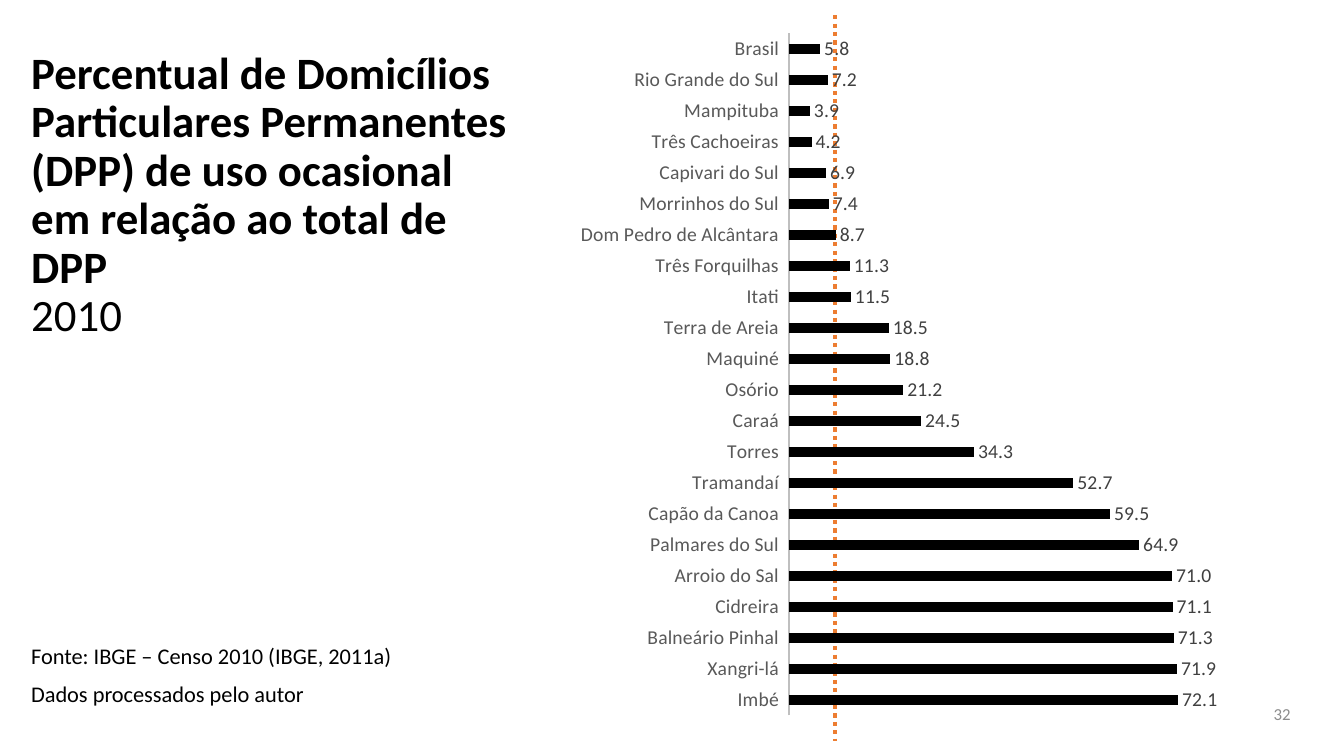
from dataclasses import dataclass

from lxml import etree
from pptx import Presentation
from pptx.chart.data import CategoryChartData
from pptx.dml.color import RGBColor
from pptx.enum.chart import XL_CHART_TYPE, XL_LABEL_POSITION, XL_TICK_LABEL_POSITION, XL_TICK_MARK
from pptx.enum.dml import MSO_LINE
from pptx.enum.shapes import MSO_CONNECTOR
from pptx.enum.text import MSO_ANCHOR, MSO_AUTO_SIZE, PP_ALIGN
from pptx.oxml import parse_xml
from pptx.oxml.ns import nsdecls, qn
from pptx.util import Pt

BAR_CLUSTERED = XL_CHART_TYPE.BAR_CLUSTERED
OUTSIDE_END = XL_LABEL_POSITION.OUTSIDE_END
LABELS_LOW = XL_TICK_LABEL_POSITION.LOW
NO_TICK = XL_TICK_MARK.NONE
DOTTED = MSO_LINE.ROUND_DOT
STRAIGHT = MSO_CONNECTOR.STRAIGHT
TOP, MIDDLE = MSO_ANCHOR.TOP, MSO_ANCHOR.MIDDLE
LEFT, RIGHT = PP_ALIGN.LEFT, PP_ALIGN.RIGHT
NO_FIT = MSO_AUTO_SIZE.NONE

EMU_PER_PX = 9144
TITLE_ONLY = 5


def px(length: int) -> int:
    return length * EMU_PER_PX


@dataclass(frozen=True)
class Theme:
    font: str = "Calibri"
    ink: RGBColor = RGBColor(0, 0, 0)
    label: RGBColor = RGBColor(0x40, 0x40, 0x40)
    category: RGBColor = RGBColor(0x59, 0x59, 0x59)
    number: RGBColor = RGBColor(0x8C, 0x8C, 0x8C)
    axis: RGBColor = RGBColor(0xBF, 0xBF, 0xBF)
    accent: RGBColor = RGBColor(0xED, 0x7D, 0x31)
    title_size: int = 32
    source_size: int = 16
    chart_size: int = 14
    number_size: int = 12


@dataclass(frozen=True)
class Frame:
    left: int
    top: int
    width: int
    height: int

    def emu(self) -> tuple[int, int, int, int]:
        return px(self.left), px(self.top), px(self.width), px(self.height)


@dataclass(frozen=True)
class TextBlock:
    frame: Frame
    lines: tuple[str, ...]
    size: int
    color: RGBColor
    align: PP_ALIGN
    anchor: MSO_ANCHOR
    line_spacing: float = 1.0
    gap: int = 0


@dataclass(frozen=True)
class Place:
    name: str
    percent: float


THEME = Theme()
TITLE_FRAME = Frame(21, 35, 504, 319)
CHART_FRAME = Frame(565, 19, 659, 705)
PLOT_LAYOUT = {"x": 0.33, "y": 0.02, "w": 0.65, "h": 0.96}
TITLE = "Percentual de Domicílios Particulares Permanentes (DPP) de uso ocasional em relação ao total de DPP"
YEAR = "2010"
TEXT_BLOCKS = (
    TextBlock(Frame(1194, 688, 96, 40), ("32",), THEME.number_size, THEME.number, RIGHT, MIDDLE),
    TextBlock(
        Frame(21, 635, 659, 85),
        ("Fonte: IBGE – Censo 2010 (IBGE, 2011a)", "Dados processados pelo autor"),
        THEME.source_size, THEME.ink, LEFT, TOP, 0.9, 10,
    ),
)
PLACES = (
    Place("Brasil", 5.8),
    Place("Rio Grande do Sul", 7.2),
    Place("Mampituba", 3.9),
    Place("Três Cachoeiras", 4.2),
    Place("Capivari do Sul", 6.9),
    Place("Morrinhos do Sul", 7.4),
    Place("Dom Pedro de Alcântara", 8.7),
    Place("Três Forquilhas", 11.3),
    Place("Itati", 11.5),
    Place("Terra de Areia", 18.5),
    Place("Maquiné", 18.8),
    Place("Osório", 21.2),
    Place("Caraá", 24.5),
    Place("Torres", 34.3),
    Place("Tramandaí", 52.7),
    Place("Capão da Canoa", 59.5),
    Place("Palmares do Sul", 64.9),
    Place("Arroio do Sal", 71.0),
    Place("Cidreira", 71.1),
    Place("Balneário Pinhal", 71.3),
    Place("Xangri-lá", 71.9),
    Place("Imbé", 72.1),
)


def style_font(font, size: int, color: RGBColor) -> None:
    font.name = THEME.font
    font.size = Pt(size)
    font.color.rgb = color


def fill_title(page) -> None:
    box = page.shapes.title
    box.left, box.top, box.width, box.height = TITLE_FRAME.emu()
    frame = box.text_frame
    frame.word_wrap = True
    frame.auto_size = NO_FIT
    frame.vertical_anchor = MIDDLE
    para = frame.paragraphs[0]
    para.alignment = LEFT
    para.line_spacing = 0.9
    style_font(para.font, THEME.title_size, THEME.ink)
    heading = para.add_run()
    heading.text = TITLE
    heading.font.bold = True
    para.add_line_break()
    year = para.add_run()
    year.text = YEAR
    year.font.bold = False


def add_text(page, block: TextBlock) -> None:
    frame = page.shapes.add_textbox(*block.frame.emu()).text_frame
    frame.word_wrap = True
    frame.vertical_anchor = block.anchor
    for index, line in enumerate(block.lines):
        para = frame.add_paragraph() if index else frame.paragraphs[0]
        para.text = line
        para.alignment = block.align
        para.line_spacing = block.line_spacing
        if index:
            para.space_before = Pt(block.gap)
        style_font(para.font, block.size, block.color)


def add_reference_line(page) -> None:
    line = page.shapes.add_connector(STRAIGHT, px(828), px(15), px(828), px(735))
    line.line.color.rgb = THEME.accent
    line.line.width = Pt(3)
    line.line.dash_style = DOTTED
    etree.SubElement(line._element.spPr, qn("a:effectLst"))


def fix_plot_area(chart) -> None:
    area = chart._chartSpace.chart.plotArea
    for layout in area.findall(qn("c:layout")):
        area.remove(layout)
    modes = "".join(f'<c:{side}Mode val="edge"/>' for side in "xy")
    sizes = "".join(f'<c:{side} val="{share}"/>' for side, share in PLOT_LAYOUT.items())
    area.insert(0, parse_xml(
        f'<c:layout {nsdecls("c")}><c:manualLayout><c:layoutTarget val="inner"/>'
        f"{modes}{sizes}</c:manualLayout></c:layout>"
    ))


def add_percent_chart(page) -> None:
    data = CategoryChartData(number_format="0.0")
    data.categories = [place.name for place in PLACES]
    data.add_series("Series 1", [place.percent for place in PLACES])
    chart = page.shapes.add_chart(BAR_CLUSTERED, *CHART_FRAME.emu(), data).chart
    chart.has_legend = False
    chart.has_title = False
    style_font(chart.font, THEME.chart_size, THEME.ink)
    fix_plot_area(chart)

    categories = chart.category_axis
    categories.reverse_order = True
    categories.major_tick_mark = NO_TICK
    categories.tick_label_position = LABELS_LOW
    categories.format.line.color.rgb = THEME.axis
    categories.format.line.width = Pt(1.5)
    style_font(categories.tick_labels.font, THEME.chart_size, THEME.category)

    values = chart.value_axis
    values.visible = False
    values.has_major_gridlines = False
    values.minimum_scale = 0
    values.maximum_scale = 80

    plot = chart.plots[0]
    plot.vary_by_categories = False
    plot.gap_width = 227
    plot.overlap = -48
    bars = plot.series[0].format
    bars.fill.solid()
    bars.fill.fore_color.rgb = THEME.ink
    plot.has_data_labels = True
    labels = plot.data_labels
    labels.show_value = True
    labels.position = OUTSIDE_END
    labels.number_format = "0.0"
    labels.number_format_is_linked = False
    style_font(labels.font, THEME.chart_size, THEME.label)


def main() -> None:
    deck = Presentation()
    deck.slide_width, deck.slide_height = px(1333), px(750)
    page = deck.slides.add_slide(deck.slide_layouts[TITLE_ONLY])
    add_reference_line(page)
    for block in TEXT_BLOCKS:
        add_text(page, block)
    fill_title(page)
    add_percent_chart(page)
    deck.save("out.pptx")


if __name__ == "__main__":
    main()
